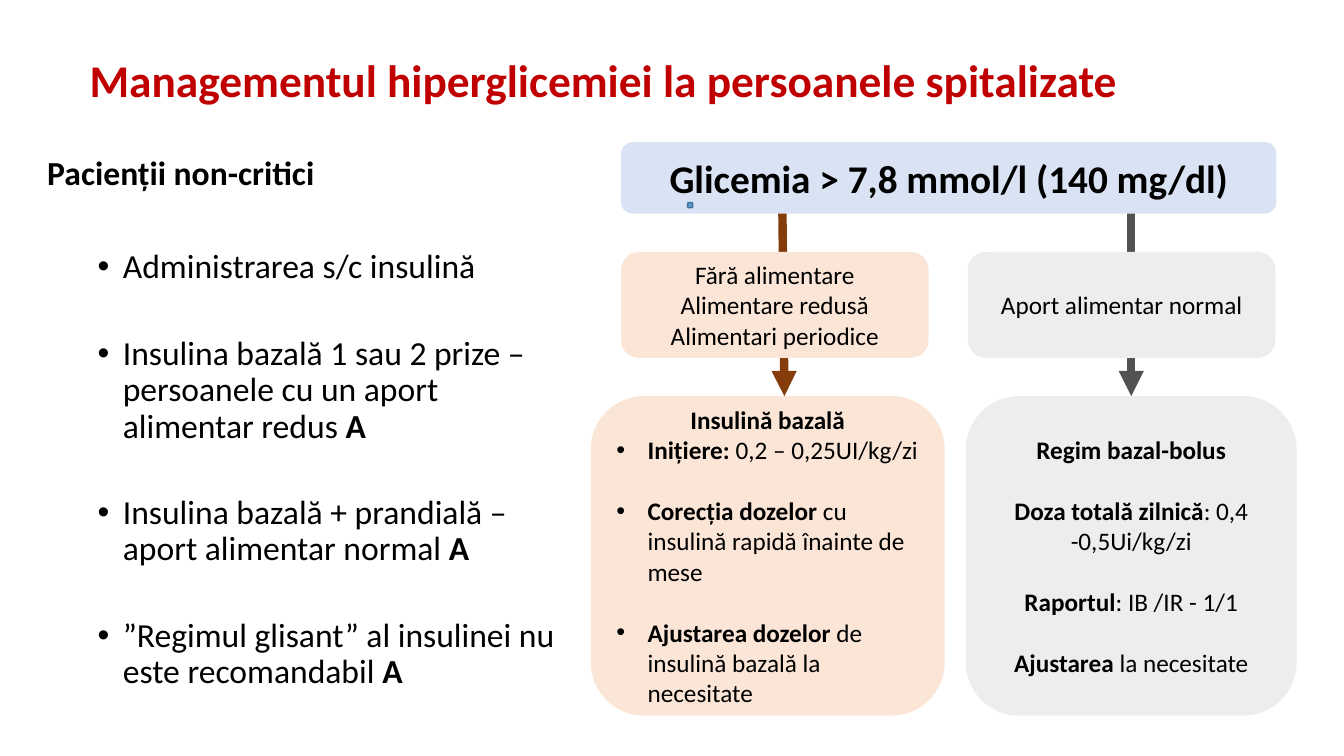
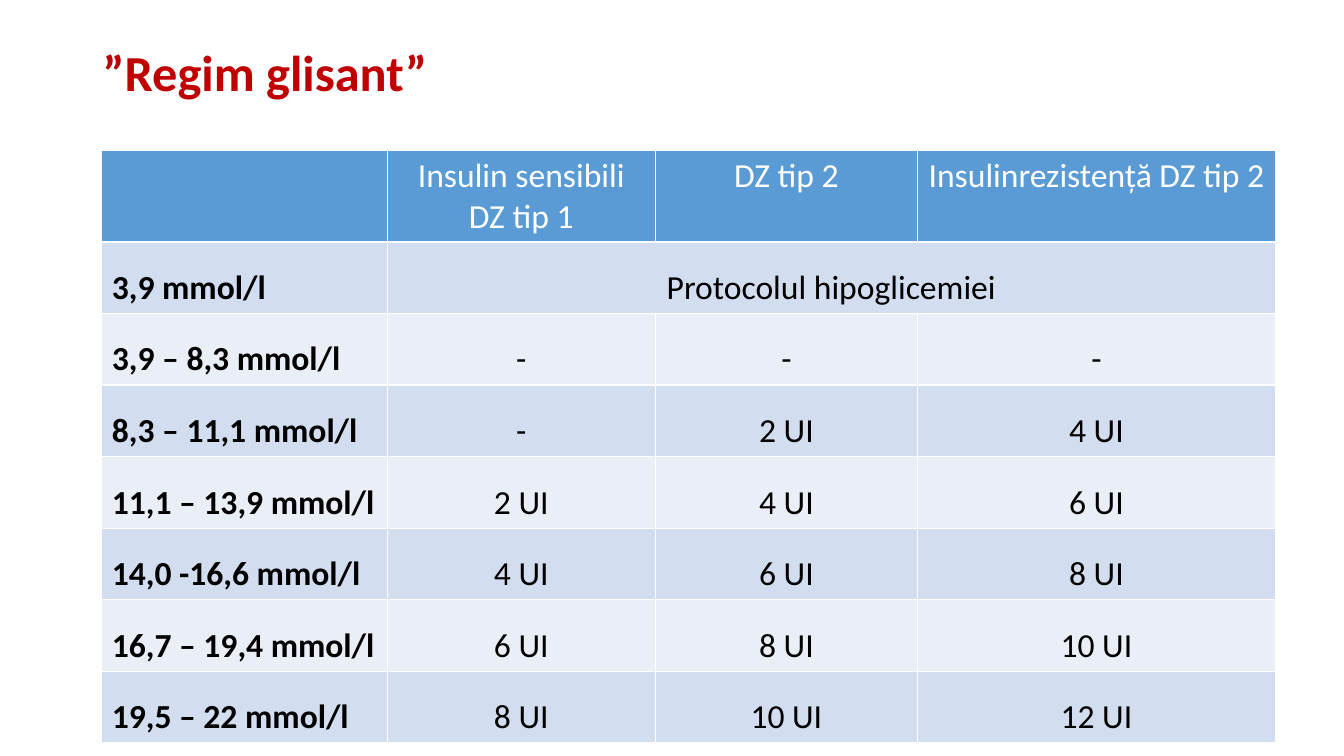
from lxml.etree import SubElement
from pptx import Presentation
from pptx.dml.color import RGBColor
from pptx.enum.shapes import MSO_CONNECTOR, MSO_SHAPE
from pptx.enum.text import MSO_ANCHOR, PP_ALIGN
from pptx.oxml import parse_xml
from pptx.oxml.ns import nsdecls, qn
from pptx.util import Inches, Pt

FONT = "Calibri"
COLORS = {
    "title": "C00000", "text": "000000", "white": "FFFFFF",
    "threshold": "DAE3F3", "reduced": "FBE5D6", "normal": "EDEDED",
    "reduced_arrow": "843C0B", "normal_arrow": "525252",
    "marker": "5B9BD5", "marker_line": "43739E",
    "header": "5B9BD5", "band_dark": "D2DEEF", "band_light": "EAEFF7",
}
BLANK_LINE = 22  # points, one line of 18 pt text

CARE_POINTS = [
    "Administrarea s/c insulină",
    "Insulina bazală 1 sau 2 prize – persoanele cu un aport alimentar redus **A**",
    "Insulina bazală + prandială – aport alimentar normal **A**",
    "”Regimul glisant” al insulinei nu este recomandabil **A**",
]
BASAL_POINTS = [
    "**Inițiere:** 0,2 – 0,25UI/kg/zi",
    "**Corecția dozelor** cu insulină rapidă înainte de mese",
    "**Ajustarea dozelor** de insulină bazală la necesitate",
]
BOLUS_POINTS = [
    "**Doza totală zilnică**: 0,4 -0,5Ui/kg/zi",
    "**Raportul**: IB /IR - 1/1",
    "**Ajustarea** la necesitate",
]
DOSE_HEADER = ["", "Insulin sensibili DZ tip 1", "DZ tip 2", "Insulinrezistență DZ tip 2"]
DOSES = [
    ["3,9 mmol/l", "Protocolul hipoglicemiei", "", ""],
    ["3,9 – 8,3 mmol/l", "-", "-", "-"],
    ["8,3 – 11,1 mmol/l", "-", "2 UI", "4 UI"],
    ["11,1 – 13,9 mmol/l", "2 UI", "4 UI", "6 UI"],
    ["14,0 -16,6 mmol/l", "4 UI", "6 UI", "8 UI"],
    ["16,7 – 19,4 mmol/l", "6 UI", "8 UI", "10 UI"],
    ["19,5 – 22 mmol/l", "8 UI", "10 UI", "12 UI"],
]
COLUMN_WIDTHS = [2.83, 2.66, 2.6, 3.55]
HEADER_HEIGHT, DOSE_HEIGHT = 0.91, 0.71


def rgb(name):
    return RGBColor.from_string(COLORS[name])


def write(paragraph, text, size, color="text", bold=None, align=PP_ALIGN.LEFT,
          before=0, spacing=None):
    """Fill a paragraph; words between ** are bold."""
    font = paragraph.font
    font.name, font.size, font.bold = FONT, Pt(size), bold
    font.color.rgb = rgb(color)
    paragraph.alignment = align
    paragraph.space_before = Pt(before)
    if spacing:
        paragraph.line_spacing = spacing
    for index, part in enumerate(text.split("**")):
        if part:
            run = paragraph.add_run()
            run.text = part
            if index % 2:
                run.font.bold = True


def add_bullet(paragraph, left, hanging):
    properties = paragraph._p.get_or_add_pPr()
    properties.set("marL", str(Inches(left)))
    properties.set("indent", str(-Inches(hanging)))
    for tag in ('buFont {} typeface="Arial"', 'buChar {} char="•"'):
        bullet = parse_xml("<a:" + tag.format(nsdecls("a")) + "/>")
        properties.insert_element_before(bullet, "a:tabLst", "a:defRPr", "a:extLst")


def add_text_area(slide, left, top, width, height, anchor):
    area = slide.shapes.add_textbox(*map(Inches, (left, top, width, height)))
    frame = area.text_frame
    frame.word_wrap = True
    frame.vertical_anchor = anchor
    return frame


def add_title(slide, text, left, top, height, size):
    frame = add_text_area(slide, left, top, 11.5, height, MSO_ANCHOR.MIDDLE)
    write(frame.paragraphs[0], text, size, "title", bold=True, spacing=0.9)


def add_box(slide, left, top, width, height, fill, line=None):
    box = slide.shapes.add_shape(MSO_SHAPE.ROUNDED_RECTANGLE,
                                 *map(Inches, (left, top, width, height)))
    box.shadow.inherit = False
    box.fill.solid()
    box.fill.fore_color.rgb = rgb(fill)
    if line:
        box.line.color.rgb = rgb(line)
        box.line.width = Pt(1)
    else:
        box.line.fill.background()
    box.text_frame.vertical_anchor = MSO_ANCHOR.MIDDLE
    return box


def write_centered(box, lines, size=18, bold=None):
    frame = box.text_frame
    for index, line in enumerate(lines):
        paragraph = frame.add_paragraph() if index else frame.paragraphs[0]
        write(paragraph, line, size, bold=bold, align=PP_ALIGN.CENTER)


def add_arrow(slide, start, end, color):
    arrow = slide.shapes.add_connector(MSO_CONNECTOR.STRAIGHT, *map(Inches, start + end))
    arrow.line.color.rgb = rgb(color)
    arrow.line.width = Pt(6)
    SubElement(arrow.line._get_or_add_ln(), qn("a:tailEnd"), type="triangle")
    SubElement(arrow._element.spPr, qn("a:effectLst"))
    return arrow


def add_care_list(slide):
    frame = add_text_area(slide, 0.37, 1.5, 5.28, 5.34, MSO_ANCHOR.TOP)
    write(frame.paragraphs[0], "Pacienții non-critici", 24, bold=True, spacing=0.9)
    for index, point in enumerate(CARE_POINTS):
        paragraph = frame.add_paragraph()
        write(paragraph, point, 24, before=36 if index else 41, spacing=0.9)
        add_bullet(paragraph, 0.75, 0.25)


def add_regimen(box, heading, points, bulleted):
    write_centered(box, [heading], bold=True)
    for index, point in enumerate(points):
        paragraph = box.text_frame.add_paragraph()
        if bulleted:
            write(paragraph, point, 18, before=BLANK_LINE if index else 0)
            add_bullet(paragraph, 0.31, 0.31)
        else:
            write(paragraph, point, 18, align=PP_ALIGN.CENTER, before=BLANK_LINE)


def add_borders(cell):
    properties = cell._tc.get_or_add_tcPr()
    for side in ("lnL", "lnR", "lnT", "lnB"):
        border = SubElement(properties, qn("a:" + side), w=str(Pt(1)))
        fill = SubElement(border, qn("a:solidFill"))
        SubElement(fill, qn("a:srgbClr"), val=COLORS["white"])


def add_dose_table(slide):
    rows = [DOSE_HEADER] + DOSES
    height = HEADER_HEIGHT + DOSE_HEIGHT * len(DOSES)
    table = slide.shapes.add_table(
        len(rows), len(COLUMN_WIDTHS), Inches(1.01), Inches(1.49),
        Inches(sum(COLUMN_WIDTHS)), Inches(height)).table
    table.first_row = table.horz_banding = False
    for column, width in zip(table.columns, COLUMN_WIDTHS):
        column.width = Inches(width)
    for r, values in enumerate(rows):
        table.rows[r].height = Inches(DOSE_HEIGHT if r else HEADER_HEIGHT)
        band = "header" if r == 0 else "band_dark" if r % 2 else "band_light"
        for c, value in enumerate(values):
            cell = table.cell(r, c)
            add_borders(cell)
            cell.fill.solid()
            cell.fill.fore_color.rgb = rgb(band)
            if value:
                write(cell.text_frame.paragraphs[0], value, 24,
                      color="text" if r else "white", bold=c == 0,
                      align=PP_ALIGN.CENTER if c else PP_ALIGN.LEFT,
                      spacing=1.5 if r else None)
    table.cell(1, 1).merge(table.cell(1, 3))


def build_management(slide):
    normal_arrow = add_arrow(slide, (11.22, 2.1), (11.22, 3.93), "normal_arrow")
    add_arrow(slide, (7.76, 2.09), (7.78, 3.93), "reduced_arrow")
    add_title(slide, "Managementul hiperglicemiei la persoanele spitalizate",
              0.79, 0.42, 0.81, 32.4)
    add_care_list(slide)

    threshold = add_box(slide, 6.16, 1.41, 6.5, 0.71, "threshold")
    write_centered(threshold, ["Glicemia > 7,8 mmol/l (140 mg/dl)"], 28, bold=True)
    add_box(slide, 6.82, 2.01, 0.05, 0.05, "marker", "marker_line")

    reduced_intake = add_box(slide, 6.16, 2.5, 3.05, 1.05, "reduced")
    write_centered(reduced_intake,
                   ["Fără alimentare", "Alimentare redusă", "Alimentari periodice"])
    normal_intake = add_box(slide, 9.6, 2.5, 3.05, 1.05, "normal")
    write_centered(normal_intake, ["Aport alimentar normal"])

    basal = add_box(slide, 5.86, 3.93, 3.51, 3.17, "reduced")
    add_regimen(basal, "Insulină bazală", BASAL_POINTS, bulleted=True)
    basal_bolus = add_box(slide, 9.58, 3.93, 3.28, 3.17, "normal")
    add_regimen(basal_bolus, "Regim bazal-bolus", BOLUS_POINTS, bulleted=False)
    normal_arrow.end_connect(basal_bolus, 0)


def build_sliding_scale(slide):
    add_title(slide, "”Regim glisant”", 0.92, 0.4, 0.7, 36)
    add_dose_table(slide)


def main():
    deck = Presentation()
    deck.slide_width, deck.slide_height = Inches(13.33), Inches(7.5)
    for build in (build_management, build_sliding_scale):
        build(deck.slides.add_slide(deck.slide_layouts[6]))
    deck.save("out.pptx")


if __name__ == "__main__":
    main()
